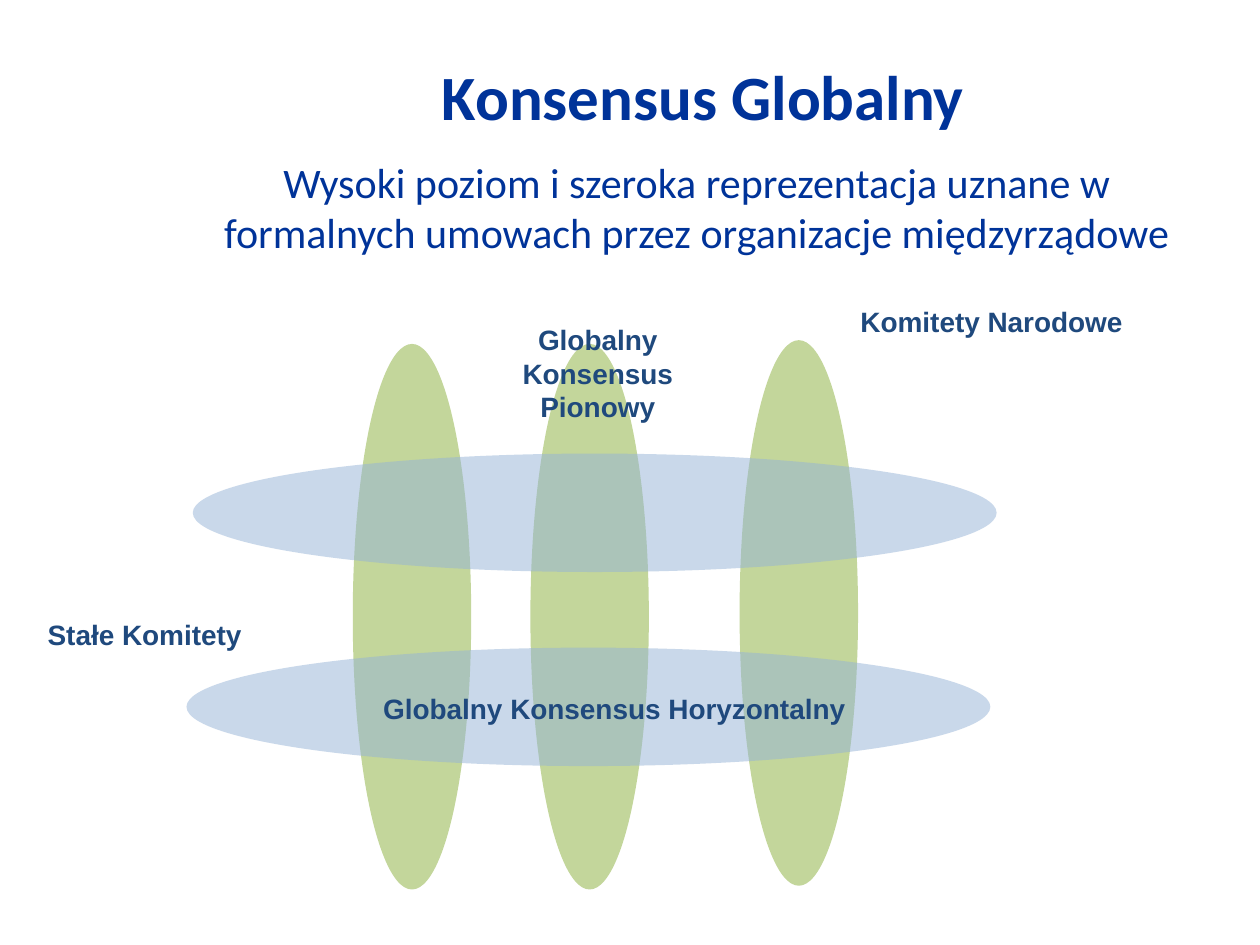
import pptx
import pptx.util
import pptx.dml.color
import pptx.enum.shapes
import pptx.enum.text
import pptx.oxml
import pptx.oxml.ns
import lxml.etree

RGBColor = pptx.dml.color.RGBColor
Align = pptx.enum.text.PP_ALIGN

HEADING_BLUE = RGBColor(0x00, 0x33, 0x99)
LABEL_BLUE = RGBColor(0x1F, 0x49, 0x7D)
VERTICAL_GREEN = RGBColor(0xC3, 0xD6, 0x9B)
HORIZONTAL_BLUE = RGBColor(0x95, 0xB3, 0xD7)

# The slide is a grid of 100 columns by 75 rows of square cells.
CELL = pptx.util.Inches(0.1)
COLUMNS, ROWS = 100, 75
BAND_THICKNESS = 9.4
VERTICAL_LENGTH = 43.3
HORIZONTAL_LENGTH = 63.8

VERTICAL_BANDS = [(42.1, 27.3), (28, 27.3), (58.7, 27)]
HORIZONTAL_BANDS = [(14.8, 51.4), (15.3, 36)]
LABELS = [
    ("Globalny Konsensus Pionowy", (39.6, 25.1, 15.7, 9.1), Align.CENTER),
    ("Globalny Konsensus Horyzontalny", (17.9, 54.4, 50.2, 3.7), Align.RIGHT),
    ("Komitety Narodowe", (65.7, 23.7, 26, 9.1), Align.CENTER),
    ("Stałe Komitety", (2.8, 48.5, 20.1, 9.1), Align.LEFT),
]


def cells(*counts):
    return [round(count * CELL) for count in counts]


def write(frame, wording, align, font_name, size, color, bold=False):
    frame.word_wrap = True
    frame.auto_size = pptx.enum.text.MSO_AUTO_SIZE.NONE
    paragraph = frame.paragraphs[0]
    paragraph.alignment = align
    run = paragraph.add_run()
    run.text = wording
    run.font.name = font_name
    run.font.size = pptx.util.Pt(size)
    run.font.bold = bold
    run.font.color.rgb = color


def add_heading(slide):
    title = slide.shapes.title
    title.left, title.top, title.width, title.height = cells(16, 1.3, 79.6, 12.6)
    title.text_frame.vertical_anchor = pptx.enum.text.MSO_ANCHOR.MIDDLE
    write(title.text_frame, "Konsensus Globalny", Align.CENTER,
          "Calibri", 36, HEADING_BLUE, bold=True)
    subtitle = slide.shapes.add_textbox(*cells(14.9, 11.9, 80.8, 9.1))
    write(subtitle.text_frame,
          "Wysoki poziom i szeroka reprezentacja uznane w formalnych umowach "
          "przez organizacje międzyrządowe",
          Align.CENTER, "Calibri", 24, HEADING_BLUE)


def add_band(slide, corner, size, color, opacity=100):
    """Add a borderless ellipse; opacity is a percentage."""
    band = slide.shapes.add_shape(
        pptx.enum.shapes.MSO_SHAPE.OVAL, *cells(*corner, *size))
    band.shadow.inherit = False
    band.line.fill.background()
    band.fill.solid()
    band.fill.fore_color.rgb = color
    if opacity < 100:
        tint = band.fill._xPr.find(".//" + pptx.oxml.ns.qn("a:srgbClr"))
        alpha = lxml.etree.SubElement(tint, pptx.oxml.ns.qn("a:alpha"))
        alpha.set("val", str(opacity * 1000))


def add_label(slide, wording, area, align):
    label = slide.shapes.add_textbox(*cells(*area))
    write(label.text_frame, wording, align, "Arial", 16, LABEL_BLUE, bold=True)


def main():
    deck = pptx.Presentation()
    deck.slide_width, deck.slide_height = cells(COLUMNS, ROWS)
    slide = deck.slides.add_slide(deck.slide_layouts.get_by_name("Title Only"))
    add_heading(slide)
    for corner in VERTICAL_BANDS:
        add_band(slide, corner, (BAND_THICKNESS, VERTICAL_LENGTH), VERTICAL_GREEN)
    for corner in HORIZONTAL_BANDS:
        add_band(slide, corner, (HORIZONTAL_LENGTH, BAND_THICKNESS),
                 HORIZONTAL_BLUE, opacity=50)
    for wording, area, align in LABELS:
        add_label(slide, wording, area, align)
    deck.save("out.pptx")


if __name__ == "__main__":
    main()
